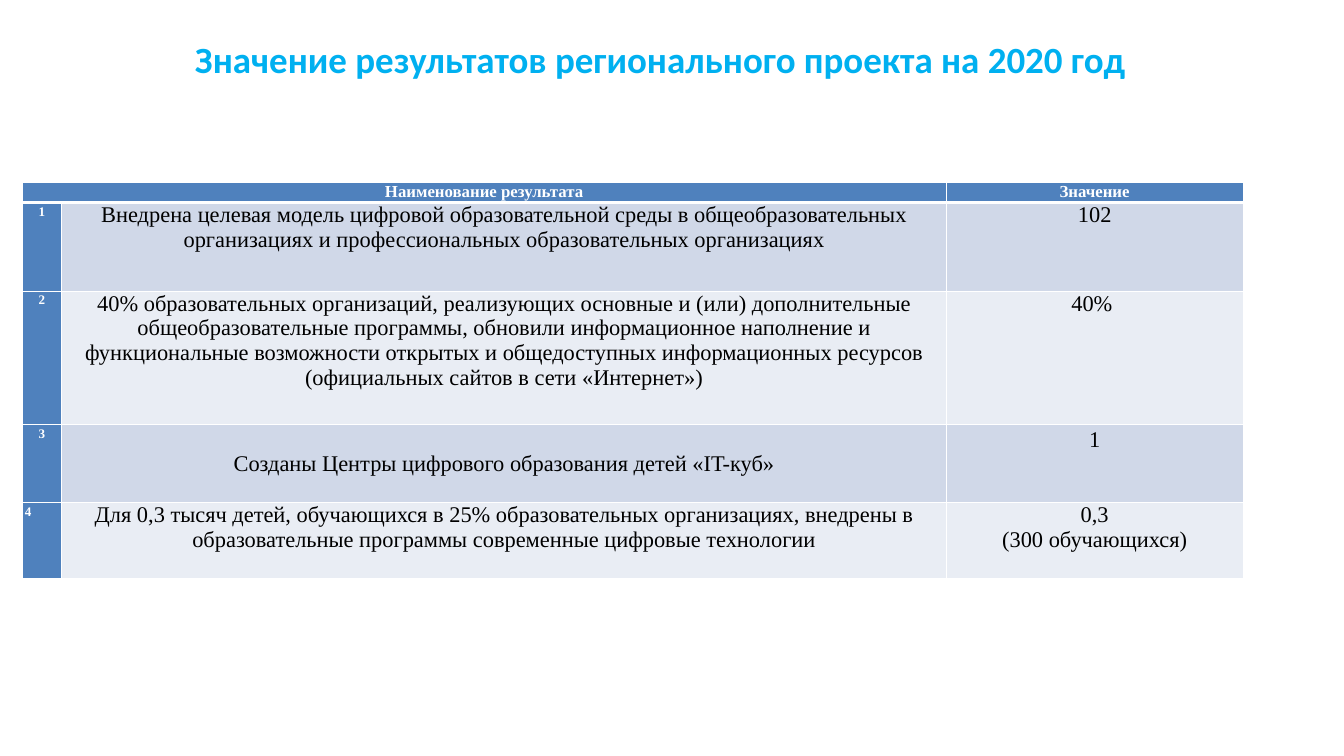
from lxml import etree
from pptx import Presentation
from pptx import util as u
from pptx.dml.color import RGBColor
from pptx.enum import text
from pptx.oxml import ns

SKY = RGBColor(0x00, 0xB0, 0xF0)
BLUE = RGBColor(0x4F, 0x81, 0xBD)
BANDS = RGBColor(0xD0, 0xD8, 0xE8), RGBColor(0xE9, 0xED, 0xF4)
WHITE = RGBColor(0xFF, 0xFF, 0xFF)
BLACK = RGBColor(0x00, 0x00, 0x00)
CENTER, JUSTIFY = text.PP_ALIGN.CENTER, text.PP_ALIGN.JUSTIFY
TOP, MIDDLE = text.MSO_ANCHOR.TOP, text.MSO_ANCHOR.MIDDLE

RESULTS = [
    ("Внедрена целевая модель цифровой образовательной среды в общеобразовательных "
     "организациях и профессиональных образовательных организациях", "102"),
    ("40% образовательных организаций, реализующих основные и (или) дополнительные "
     "общеобразовательные программы, обновили информационное наполнение и "
     "функциональные возможности открытых и общедоступных информационных ресурсов "
     "(официальных сайтов в сети «Интернет»)", "40% "),
    ("Созданы Центры цифрового образования детей «IT-куб»", "1"),
    ("Для 0,3 тысяч детей, обучающихся в 25% образовательных организациях, внедрены в "
     "образовательные программы современные цифровые технологии", "0,3\n(300 обучающихся)"),
]


class ResultsSlide:
    table_font = "Times New Roman"
    title_font = "Calibri"

    def __init__(self, deck):
        self.width, self.height = deck.slide_width, deck.slide_height
        self.slide = deck.slides.add_slide(deck.slide_layouts[6])

    def across(self, percent):
        return round(self.width * percent / 100)

    def down(self, percent):
        return round(self.height * percent / 100)

    def fill_text(self, frame, words, font, size, color, bold, align=CENTER, spacing=None):
        frame.text = words
        frame.word_wrap = True
        for paragraph in frame.paragraphs:
            paragraph.alignment = align
            if spacing:
                paragraph.line_spacing = spacing
            for run in paragraph.runs:
                run.font.name, run.font.size = font, u.Pt(size)
                run.font.bold, run.font.color.rgb = bold, color

    def title(self, words, left, top, width, height):
        heading = self.slide.shapes.add_textbox(
            self.across(left), self.down(top), self.across(width), self.down(height))
        frame = heading.text_frame
        frame.vertical_anchor = MIDDLE
        self.fill_text(frame, words, self.title_font, 39.6, SKY, True)

    def table(self, left, top, columns, rows):
        table = self.slide.shapes.add_table(
            len(rows), len(columns), self.across(left), self.down(top),
            self.across(sum(columns)), self.down(sum(rows))).table
        for column, share in zip(table.columns, columns):
            column.width = self.across(share)
        for row, share in zip(table.rows, rows):
            row.height = self.down(share)
        return table

    def cell(self, cell, words, fill, size, color, bold,
             align=CENTER, spacing=None, anchor=TOP, bottom=1):
        cell.margin_left = cell.margin_right = u.Inches(0.04)
        cell.margin_top = cell.margin_bottom = 0
        cell.vertical_anchor = anchor
        self.fill_text(cell.text_frame, words, self.table_font, size, color, bold, align, spacing)
        cell.fill.solid()
        cell.fill.fore_color.rgb = fill
        self.borders(cell, bottom)

    def borders(self, cell, bottom):
        properties = cell._tc.get_or_add_tcPr()
        for position, (side, points) in enumerate(zip("LRTB", (1, 1, 1, bottom))):
            line = etree.Element(ns.qn(f"a:ln{side}"), w=str(u.Pt(points)))
            fill = etree.SubElement(line, ns.qn("a:solidFill"))
            etree.SubElement(fill, ns.qn("a:srgbClr"), val=str(WHITE))
            properties.insert(position, line)


def main():
    deck = Presentation()
    deck.slide_width, deck.slide_height = u.Inches(20), u.Inches(11.25)
    page = ResultsSlide(deck)
    page.title("Значение результатов регионального проекта на 2020 год", 12.9, 5.5, 72.5, 4.45)
    table = page.table(1.65, 24.1, [2.95, 65.8, 22.1], [2.4, 11.75, 17.6, 10.4, 10.05])

    for column, heading in enumerate(("Наименование результата", "", "Значение")):
        page.cell(table.cell(0, column), heading, BLUE, 18, WHITE, True, bottom=3)
    table.cell(0, 0).merge(table.cell(0, 1))

    for number, (result, value) in enumerate(RESULTS, 1):
        band = BANDS[(number - 1) % 2]
        centers = number == 3
        page.cell(table.cell(number, 0), str(number), BLUE, 14, WHITE, True,
                  align=JUSTIFY if number == 4 else CENTER, spacing=1.15)
        page.cell(table.cell(number, 1), result, band, 24, BLACK, False,
                  anchor=MIDDLE if centers else TOP)
        page.cell(table.cell(number, 2), value, band, 24, BLACK, False,
                  spacing=1.15 if centers else None)

    deck.save("out.pptx")


if __name__ == "__main__":
    main()
